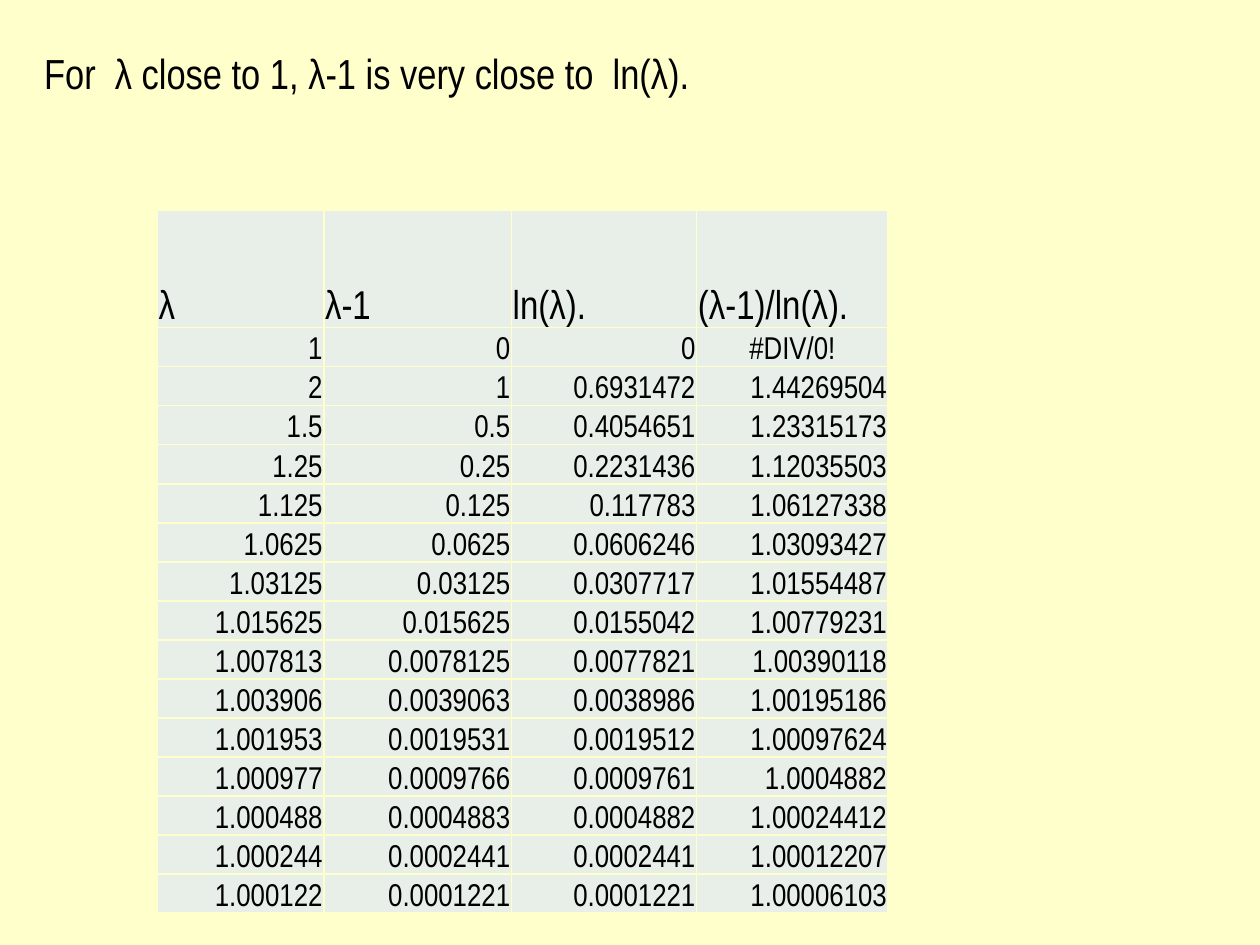
from lxml import etree
from pptx import Presentation
from pptx.dml.color import RGBColor
from pptx.enum import text
from pptx.oxml import ns
from pptx.util import Inches, Pt

TITLE = "For  λ close to 1, λ-1 is very close to  ln(λ)."
HEADER = ("λ", "λ-1", "ln(λ).", "(λ-1)/ln(λ).")
VALUES = [
    ("1", "0", "0", "#DIV/0!"),
    ("2", "1", "0.6931472", "1.44269504"),
    ("1.5", "0.5", "0.4054651", "1.23315173"),
    ("1.25", "0.25", "0.2231436", "1.12035503"),
    ("1.125", "0.125", "0.117783", "1.06127338"),
    ("1.0625", "0.0625", "0.0606246", "1.03093427"),
    ("1.03125", "0.03125", "0.0307717", "1.01554487"),
    ("1.015625", "0.015625", "0.0155042", "1.00779231"),
    ("1.007813", "0.0078125", "0.0077821", "1.00390118"),
    ("1.003906", "0.0039063", "0.0038986", "1.00195186"),
    ("1.001953", "0.0019531", "0.0019512", "1.00097624"),
    ("1.000977", "0.0009766", "0.0009761", "1.0004882"),
    ("1.000488", "0.0004883", "0.0004882", "1.00024412"),
    ("1.000244", "0.0002441", "0.0002441", "1.00012207"),
    ("1.000122", "0.0001221", "0.0001221", "1.00006103"),
]
COLUMN_WIDTHS = (1.32, 1.49, 1.47, 1.52)
HEADER_HEIGHT, VALUE_HEIGHT = 0.93, 0.31
BACKGROUND, CELL_FILL, INK = "FFFFCC", "E8EFE8", "000000"
FONT = "Arial Narrow"
CELL_FORMAT = {
    "vertical_anchor": text.MSO_ANCHOR.BOTTOM,
    "margin_left": Inches(0.01),
    "margin_right": Inches(0.01),
    "margin_top": Inches(0.01),
    "margin_bottom": 0,
}
TITLE_FORMAT = {
    "word_wrap": True,
    "vertical_anchor": text.MSO_ANCHOR.TOP,
    "auto_size": text.MSO_AUTO_SIZE.NONE,
}


def apply(target, formats):
    for name, value in formats.items():
        setattr(target, name, value)


def paint(fill, color):
    fill.solid()
    fill.fore_color.rgb = RGBColor.from_string(color)


def write(frame, words, size, align):
    frame.text = words
    paragraph = frame.paragraphs[0]
    paragraph.alignment = align
    apply(paragraph.runs[0].font, {"name": FONT, "size": Pt(size)})
    paint(paragraph.runs[0].font.fill, INK)


def add_borders(cell, color, width):
    properties = cell._tc.get_or_add_tcPr()
    for side in ("a:lnL", "a:lnR", "a:lnT", "a:lnB"):
        line = etree.SubElement(properties, ns.qn(side), w=str(Pt(width)))
        fill = etree.SubElement(line, ns.qn("a:solidFill"))
        etree.SubElement(fill, ns.qn("a:srgbClr"), val=color)


def alignment_of(row, words):
    if row == 0:
        return text.PP_ALIGN.LEFT
    return text.PP_ALIGN.CENTER if words.startswith("#") else text.PP_ALIGN.RIGHT


def add_values_table(slide):
    rows = [HEADER] + VALUES
    heights = [HEADER_HEIGHT] + [VALUE_HEIGHT] * len(VALUES)
    table = slide.shapes.add_table(
        len(rows), len(HEADER), Inches(1.25), Inches(1.67),
        Inches(sum(COLUMN_WIDTHS)), Inches(sum(heights))).table
    for column, width in zip(table.columns, COLUMN_WIDTHS):
        column.width = Inches(width)
    for r, (row, height) in enumerate(zip(rows, heights)):
        table.rows[r].height = Inches(height)
        for c, words in enumerate(row):
            cell = table.cell(r, c)
            apply(cell, CELL_FORMAT)
            add_borders(cell, BACKGROUND, 1)
            paint(cell.fill, CELL_FILL)
            write(cell.text_frame, words, 18 if r else 23, alignment_of(r, words))


def main():
    deck = Presentation()
    apply(deck, {"slide_width": Inches(10), "slide_height": Inches(7.5)})
    slide = deck.slides.add_slide(deck.slide_layouts[5])
    paint(slide.background.fill, BACKGROUND)

    title = slide.shapes.title
    apply(title, {"left": Inches(0.25), "top": Inches(0.33),
                  "width": Inches(9.17), "height": Inches(0.5)})
    apply(title.text_frame, TITLE_FORMAT)
    write(title.text_frame, TITLE, 24, text.PP_ALIGN.LEFT)

    add_values_table(slide)
    deck.save("out.pptx")


if __name__ == "__main__":
    main()
